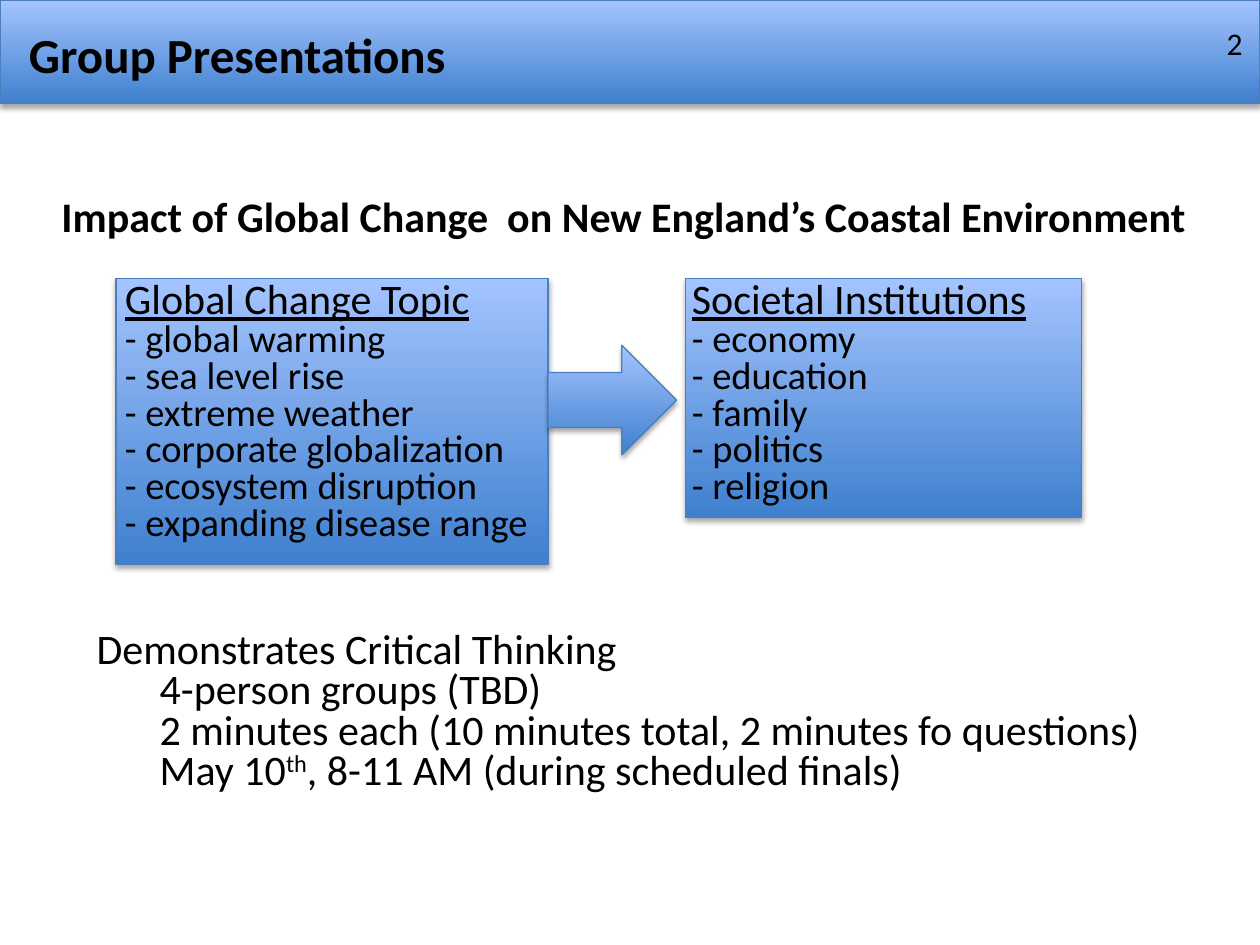
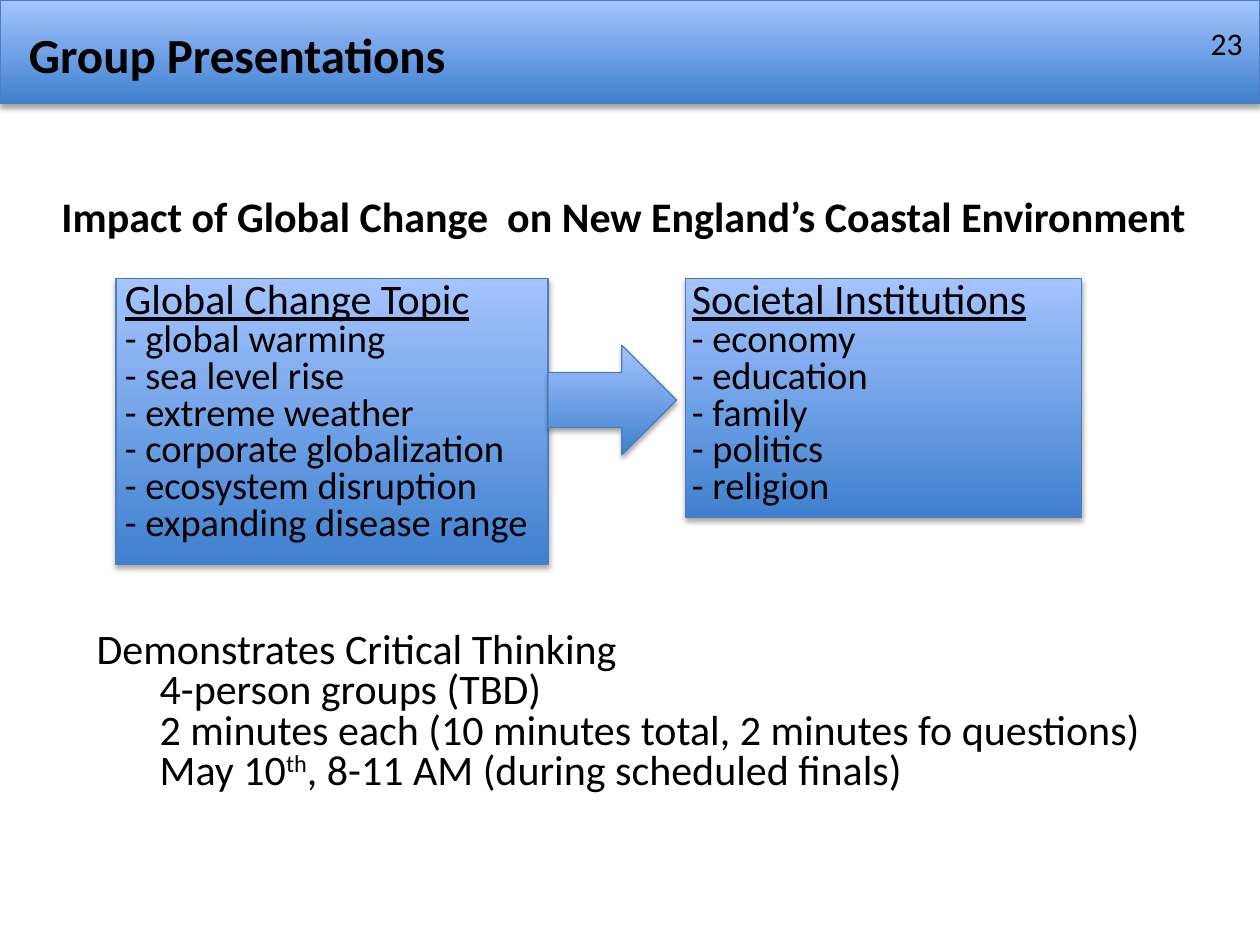
from dataclasses import dataclass

from lxml import etree
from pptx import Presentation
from pptx import util as u
from pptx.dml.color import RGBColor
from pptx.enum import shapes, text
from pptx.oxml import ns


@dataclass(frozen=True)
class Theme:
    font: str = "Calibri"
    ink: str = "000000"
    gradient: tuple = ("3F80CE", "A4C4FF")  # bottom, top
    outline: str = "4B7EBC"
    title_size: int = 28
    text_size: int = 24
    list_size: int = 22
    number_size: int = 18
    tight: float = 0.8


def write(frame, content, *, theme, size, bold=False, underline=False,
          align=text.PP_ALIGN.LEFT, spacing=None, indent=0):
    """Add one paragraph; content is a string or a list of (string, baseline)."""
    paragraph = frame.paragraphs[0]
    if paragraph.runs:
        paragraph = frame.add_paragraph()
    paragraph.alignment = align
    paragraph.line_spacing = spacing
    if indent:
        paragraph._p.get_or_add_pPr().set("marL", str(u.Cm(indent)))
    parts = [(content, 0)] if isinstance(content, str) else content
    for words, baseline in parts:
        run = paragraph.add_run()
        run.text = words
        font = run.font
        font.name, font.size = theme.font, u.Pt(size)
        font.bold, font.underline = bold, underline
        font.color.rgb = RGBColor.from_string(theme.ink)
        if baseline:
            font._element.set("baseline", str(baseline * 1000))


class Deck:
    def __init__(self, theme):
        self.theme = theme
        self.presentation = Presentation()
        self.presentation.slide_width = u.Cm(25.4)
        self.presentation.slide_height = u.Cm(19.05)
        self.slide = None

    # Slide frame: band, title and number
    def add_slide(self, title, number):
        theme = self.theme
        self.slide = self.presentation.slides.add_slide(self.presentation.slide_layouts[5])
        band = self.block(0, 0, 25.4, 2.08)
        self.slide.shapes._spTree.insert(2, band._element)  # behind the title
        heading = self.slide.shapes.title
        heading.left, heading.top = u.Cm(0.33), u.Cm(0.36)
        heading.width, heading.height = u.Cm(24.69), u.Cm(1.45)
        heading.text_frame.auto_size = text.MSO_AUTO_SIZE.NONE
        heading.text_frame.vertical_anchor = text.MSO_ANCHOR.MIDDLE
        write(heading.text_frame, title, theme=theme, size=theme.title_size, bold=True)
        frame = self.text_box(19.38, 0.36, 5.92, 1.02)
        frame.vertical_anchor = text.MSO_ANCHOR.MIDDLE
        write(frame, str(number), theme=theme, size=theme.number_size,
              align=text.PP_ALIGN.RIGHT)

    # Shape with the shared gradient, outline and shadow
    def block(self, left, top, width, height, kind=shapes.MSO_SHAPE.RECTANGLE):
        shape = self.slide.shapes.add_shape(
            kind, u.Cm(left), u.Cm(top), u.Cm(width), u.Cm(height))
        shape.fill.gradient()
        shape.fill.gradient_angle = 90
        for stop, color in zip(shape.fill.gradient_stops, self.theme.gradient):
            stop.color.rgb = RGBColor.from_string(color)
        shape.line.color.rgb = RGBColor.from_string(self.theme.outline)
        shape.line.width = u.Pt(0.75)
        shape.shadow.inherit = False
        effects = shape._element.spPr.find(ns.qn("a:effectLst"))
        shadow = etree.SubElement(effects, ns.qn("a:outerShdw"), blurRad=str(u.Pt(3.1)),
                                  dist=str(u.Pt(1.8)), dir="5400000", rotWithShape="0")
        color = etree.SubElement(shadow, ns.qn("a:srgbClr"), val=self.theme.ink)
        etree.SubElement(color, ns.qn("a:alpha"), val="35000")
        return shape

    def text_box(self, left, top, width, height):
        box = self.slide.shapes.add_textbox(u.Cm(left), u.Cm(top), u.Cm(width), u.Cm(height))
        box.text_frame.word_wrap = True
        return box.text_frame

    # Block holding an underlined heading and a dashed list
    def panel(self, left, width, height, heading, items, inset):
        theme = self.theme
        frame = self.block(left, 5.61, width, height).text_frame
        frame.vertical_anchor = text.MSO_ANCHOR.TOP
        frame.margin_left, frame.margin_right = u.Cm(inset), u.Cm(0.1)
        frame.margin_top = u.Cm(0.08)
        write(frame, heading, theme=theme, size=theme.text_size, underline=True,
              spacing=theme.tight)
        for item in items:
            write(frame, f"- {item}", theme=theme, size=theme.list_size, spacing=theme.tight)

    # Statement, or lead line followed by indented details
    def statement(self, left, top, width, height, lead, details=(), bold=False):
        frame = self.text_box(left, top, width, height)
        style = dict(theme=self.theme, size=self.theme.text_size, spacing=self.theme.tight)
        write(frame, lead, bold=bold, **style)
        for detail in details:
            write(frame, detail, indent=1.27, **style)


TOPICS = ["global warming", "sea level rise", "extreme weather",
          "corporate globalization", "ecosystem disruption", "expanding disease range"]
INSTITUTIONS = ["economy", "education", "family", "politics", "religion"]
ARRANGEMENTS = [
    "4-person groups (TBD)",
    "2 minutes each (10 minutes total, 2 minutes fo questions)",
    [("May 10", 0), ("th", 30), (", 8-11 AM (during scheduled finals)", 0)],
]


def add_group_presentations(deck, number):
    deck.add_slide("Group Presentations", number)
    deck.statement(0.99, 3.91, 23.52, 1.1,
                   "Impact of Global Change  on New England’s Coastal Environment", bold=True)
    deck.panel(2.34, 8.71, 5.77, "Global Change Topic", TOPICS, inset=0.18)
    deck.panel(13.82, 7.98, 4.83, "Societal Institutions", INSTITUTIONS, inset=0.13)
    deck.block(11.05, 6.96, 2.59, 2.21, shapes.MSO_SHAPE.RIGHT_ARROW)
    deck.statement(1.7, 12.62, 22.81, 3.58, "Demonstrates Critical Thinking", ARRANGEMENTS)


def main():
    deck = Deck(Theme())
    for number in (2, 23):
        add_group_presentations(deck, number)
    deck.presentation.save("out.pptx")


if __name__ == "__main__":
    main()
